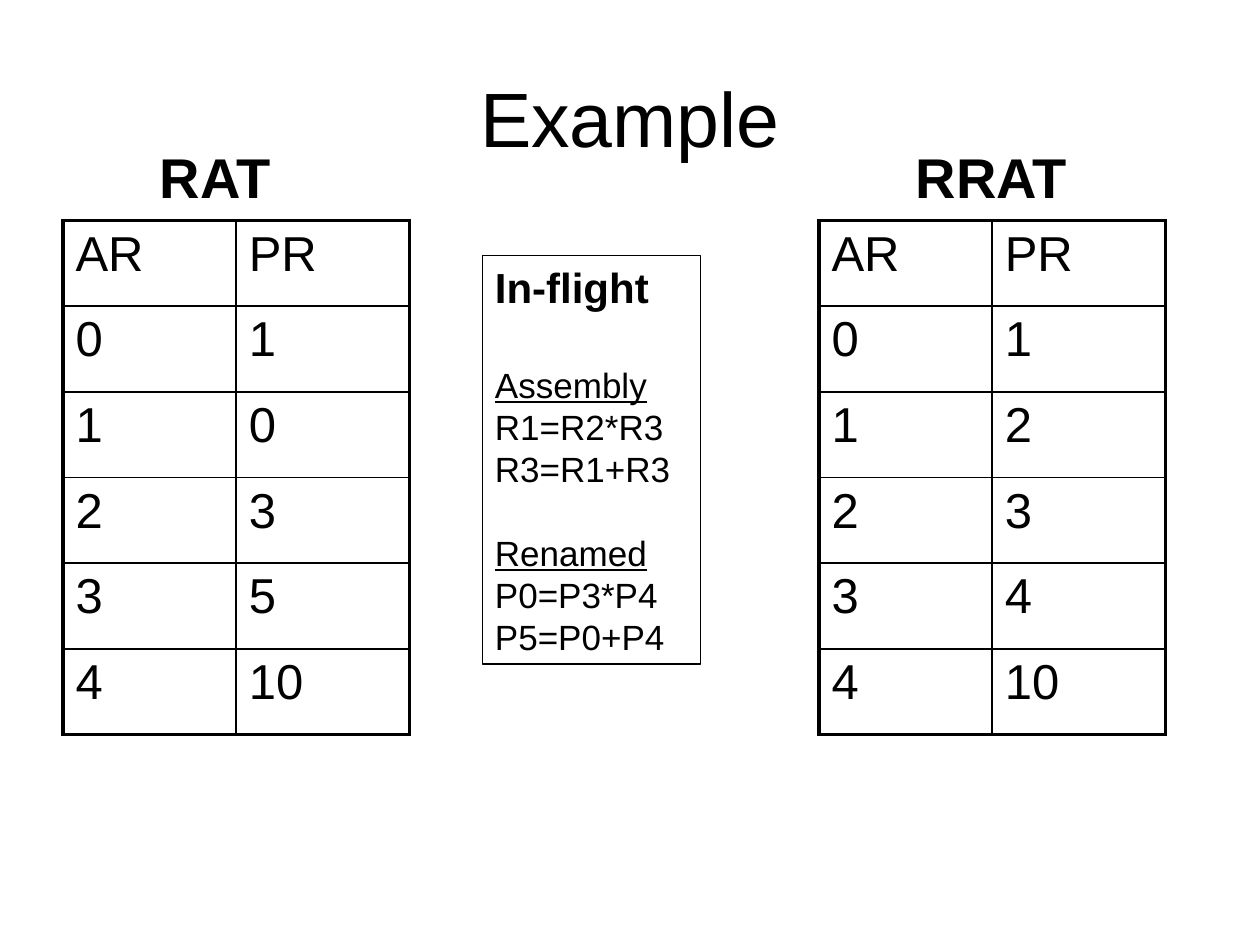
"""Build the register renaming example slide with two tables and a code box."""
from lxml.etree import SubElement
from pptx import Presentation
from pptx.dml.color import RGBColor
from pptx.enum.shapes import MSO_SHAPE as Shape
from pptx.enum.text import MSO_ANCHOR as Anchor, MSO_AUTO_SIZE as Fit, PP_ALIGN as Align
from pptx.oxml.ns import qn
from pptx.util import Inches, Pt

INK = "000000"


def color(code):
    return RGBColor.from_string(code)


def write(para, text, size, bold=False, under=False):
    run = para.add_run()
    run.text = text
    font = run.font
    font.name, font.size = "Arial", Pt(size)
    font.bold, font.underline = bold, under
    font.color.rgb = color(INK)


deck = Presentation()
deck.slide_width, deck.slide_height = Inches(10), Inches(7.5)
slide = deck.slides.add_slide(deck.slide_layouts[5])
shapes = slide.shapes

title = shapes.title
title.left, title.top = Inches(0.5), Inches(0.3)
title.width, title.height = Inches(9), Inches(1.25)
title.text_frame.vertical_anchor = Anchor.MIDDLE
head = title.text_frame.paragraphs[0]
head.alignment = Align.CENTER
write(head, "Example", 44)

maps = [
    ("RAT", 0.5, 1.11, ["1", "0", "3", "5", "10"]),
    ("RRAT", 6.5, 1.44, ["1", "2", "3", "4", "10"]),
]
for name, left, width, regs in maps:
    rows = [("AR", "PR")] + [(str(i), reg) for i, reg in enumerate(regs)]
    last = len(rows) - 1
    table = shapes.add_table(
        len(rows), 2, Inches(left), Inches(1.75), Inches(2.75), Inches(4.08)
    ).table
    table.first_row = table.horz_banding = False
    for r, row in enumerate(rows):
        for c, text in enumerate(row):
            cell = table.cell(r, c)
            cell.fill.background()
            write(cell.text_frame.paragraphs[0], text, 28)
            props = cell._tc.get_or_add_tcPr()
            edges = [("lnL", c == 0), ("lnR", c == 1), ("lnT", r == 0), ("lnB", r == last)]
            for i, (tag, outer) in enumerate(edges):
                line = SubElement(props, qn(f"a:{tag}"), w=str(Pt(2.25 if outer else 1)))
                fill = SubElement(line, qn("a:solidFill"))
                SubElement(fill, qn("a:srgbClr"), val=INK)
                props.insert(i, line)

    label = shapes.add_textbox(Inches(left + 0.67), Inches(1.08), Inches(width), Inches(0.63))
    label.text_frame.word_wrap = False
    label.text_frame.auto_size = Fit.SHAPE_TO_FIT_TEXT
    write(label.text_frame.paragraphs[0], name, 32, bold=True)

box = shapes.add_shape(
    Shape.RECTANGLE, Inches(3.83), Inches(2.03), Inches(1.73), Inches(3.24)
)
box.shadow.inherit = False
box.fill.background()
box.line.color.rgb = color(INK)
box.line.width = Pt(0.75)
frame = box.text_frame
frame.word_wrap = False
frame.vertical_anchor = Anchor.TOP
para = frame.paragraphs[0]
para.alignment = Align.LEFT
write(para, "In-flight", 24, bold=True)

parts = [
    ("Assembly", 29, ["R1=R2*R3", "R3=R1+R3"]),
    ("Renamed", 24, ["P0=P3*P4", "P5=P0+P4"]),
]
for name, gap, code in parts:
    for i, text in enumerate([name] + code):
        para = frame.add_paragraph()
        para.alignment = Align.LEFT
        para.space_before = Pt(0 if i else gap)
        write(para, text, 20, under=i == 0)

deck.save("out.pptx")
